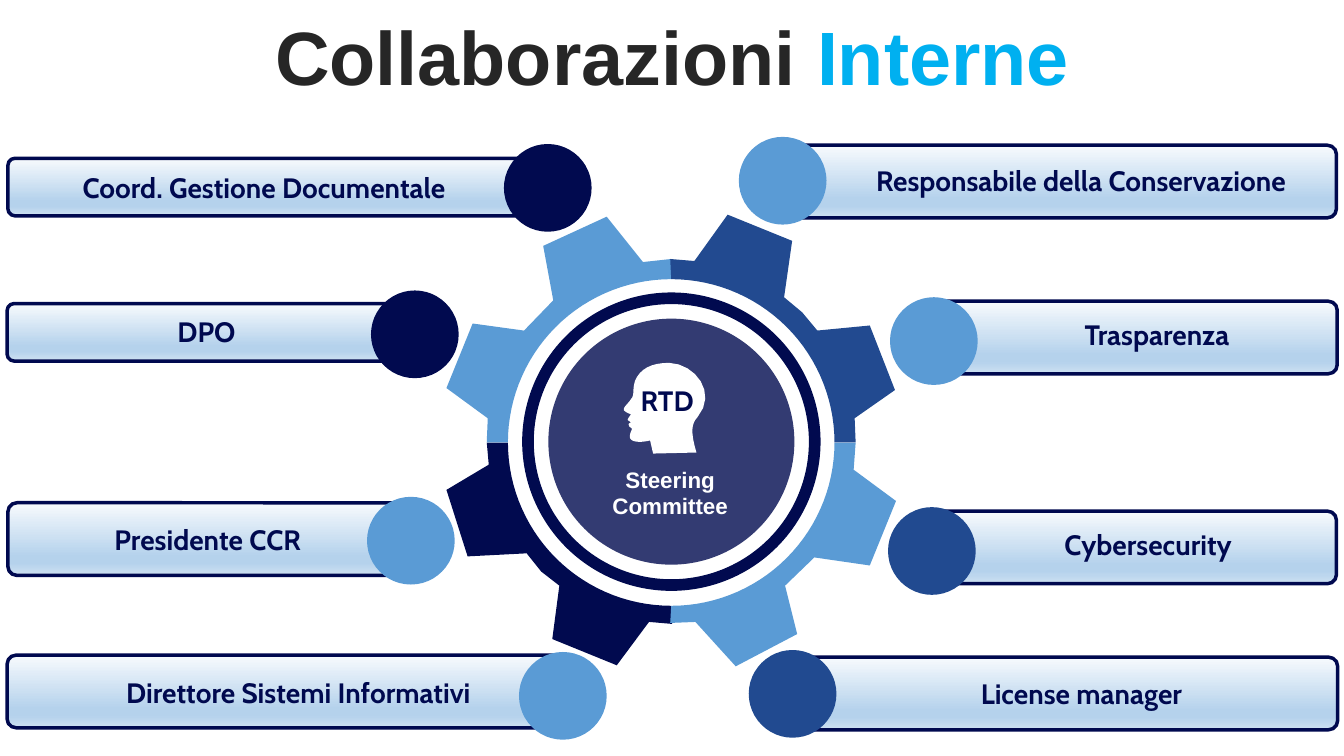
from dataclasses import dataclass
from math import cos, radians, sin

from lxml.etree import SubElement
from pptx import Presentation
from pptx.dml.color import RGBColor
from pptx.enum.shapes import MSO_SHAPE
from pptx.enum.text import MSO_ANCHOR, MSO_AUTO_SIZE, PP_ALIGN
from pptx.oxml.ns import qn
from pptx.util import Cm, Pt


@dataclass(frozen=True)
class Theme:
    ink: str = "00094F"
    navy: str = "010A4F"
    blue: str = "224A90"
    royal: str = "214A90"
    sky: str = "5A9BD5"
    white: str = "FFFFFF"
    title: str = "262626"
    accent: str = "00B0F0"
    bar_stops: tuple = ((0, "F7FAFD"), (74, "B5D2EC"), (83, "B5D2EC"), (100, "CEE1F2"))
    title_size: int = 54
    label_size: int = 20
    hub_size: int = 16
    label_font: str = "Cabin"
    plain_font: str = "Arial"


@dataclass(frozen=True)
class Role:
    """One collaborator: bar (left, top, width, height), ball and label places in cm."""
    name: str
    bar: tuple
    ball: tuple
    ball_color: str
    label: tuple


THEME = Theme()
BALL_SIZE = 2.21
LABEL_HEIGHT = 1.12

ROLES = (
    Role("Coord. Gestione Documentale", (0.2, 3.99, 14.15, 1.45),
         (12.7, 3.63), THEME.navy, (1.17, 4.17, 10.97)),
    Role("DPO", (0.18, 7.65, 10.72, 1.45), (9.35, 7.32), THEME.navy, (0, 7.8, 10.41)),
    Role("Presidente CCR", (0.2, 12.67, 10.72, 1.83),
         (9.25, 12.52), THEME.sky, (0.13, 13.03, 10.21)),
    Role("Direttore Sistemi Informativi", (0.18, 16.51, 14.25, 1.83),
         (13.08, 16.43), THEME.sky, (1.88, 16.89, 11.28)),
    Role("Responsabile della Conservazione", (19.46, 3.66, 14.22, 1.83),
         (18.62, 3.45), THEME.sky, (20.35, 3.99, 13.79)),
    Role("Trasparenza", (23.34, 7.59, 10.36, 1.83),
         (22.43, 7.49), THEME.sky, (26.24, 7.87, 5.84)),
    Role("Cybersecurity", (23.14, 12.88, 10.54, 1.83),
         (22.38, 12.78), THEME.royal, (24.64, 13.18, 8.59)),
    Role("License manager", (19.46, 16.56, 14.25, 1.83),
         (18.87, 16.38), THEME.royal, (22.96, 16.92, 8.59)),
)

# Outlines are measured in hundredths of an inch.
OUTLINE_UNIT = 0.0254
GEAR_CENTER = (666, 439)
GEAR_INNER_RADIUS = 162

# Colour, start angle of the quarter, and its toothed edge, clockwise.
GEAR_QUARTERS = (
    (THEME.navy, 90, (
        (667, 619), (644, 617), (612, 660), (548, 634), (555, 581), (537, 567),
        (521, 547), (522, 549), (464, 552), (443, 486), (485, 461), (483, 439))),
    (THEME.sky, 0, (
        (849, 439), (847, 466), (889, 497), (863, 561), (808, 553), (779, 581),
        (791, 629), (730, 661), (690, 617), (665, 618))),
    (THEME.sky, 180, (
        (483, 439), (484, 415), (443, 385), (469, 321), (520, 328), (549, 298),
        (539, 244), (602, 215), (638, 260), (666, 257))),
    (THEME.blue, 270, (
        (665, 257), (689, 259), (722, 213), (786, 239), (778, 295), (796, 310),
        (811, 328), (863, 323), (888, 387), (848, 415), (849, 439))),
)

# Pairs are straight steps, sextuples are cubic curves.
HEAD_PATH = (
    (664, 360), (646, 360, 635, 366, 630, 378), (627, 388, 630, 392, 626, 396),
    (623, 401, 618, 404, 619, 407), (621, 409, 623, 410, 626, 411),
    (625, 413, 622, 416, 623, 417), (626, 419), (625, 420, 623, 420, 624, 422),
    (624, 424, 627, 424, 627, 426), (625, 430, 624, 434, 626, 436),
    (629, 439, 637, 439, 645, 437), (648, 450), (691, 449),
    (685, 429, 686, 420, 692, 414), (712, 390, 690, 361, 664, 360),
)


def color(value):
    return RGBColor.from_string(value)


def paint(shape, fill):
    shape.shadow.inherit = False
    shape.fill.solid()
    shape.fill.fore_color.rgb = color(fill)
    shape.line.fill.background()


def add_round(page, kind, left, top, size, fill):
    shape = page.shapes.add_shape(kind, Cm(left), Cm(top), Cm(size), Cm(size))
    paint(shape, fill)
    return shape


def add_bar(page, place):
    bar = page.shapes.add_shape(MSO_SHAPE.ROUNDED_RECTANGLE, *map(Cm, place))
    bar.adjustments[0] = 0.124
    bar.shadow.inherit = False
    bar.line.color.rgb = color(THEME.ink)
    bar.line.width = Pt(2.5)
    bar.fill.gradient()
    bar.fill.gradient_angle = 270
    stops = next(bar._element.iter(qn("a:gsLst")))
    for stop in list(stops):
        stops.remove(stop)
    for position, value in THEME.bar_stops:
        stop = SubElement(stops, qn("a:gs"), pos=str(position * 1000))
        SubElement(stop, qn("a:srgbClr"), val=value)


def style_span(span, size, font, value):
    span.font.size = Pt(size)
    span.font.name = font
    span.font.bold = True
    span.font.color.rgb = color(value)


def add_text(page, place, text, size, font, value):
    box = page.shapes.add_textbox(*map(Cm, place))
    frame = box.text_frame
    frame.text = text
    frame.word_wrap = True
    frame.auto_size = MSO_AUTO_SIZE.SHAPE_TO_FIT_TEXT
    para = frame.paragraphs[0]
    para.alignment = PP_ALIGN.CENTER
    style_span(para.runs[0], size, font, value)
    return box


def add_label(page, place, text):
    add_text(page, (*place, LABEL_HEIGHT), text,
             THEME.label_size, THEME.label_font, THEME.ink)


def add_title(page):
    box = add_text(page, (0.86, 0.53, 32.16, 2.01), "Collaborazioni ",
                   THEME.title_size, THEME.plain_font, THEME.title)
    frame = box.text_frame
    frame.auto_size = MSO_AUTO_SIZE.NONE
    frame.vertical_anchor = MSO_ANCHOR.MIDDLE
    para = frame.paragraphs[0]
    para.line_spacing = 0.9
    span = para.add_run()
    span.text = "Interne"
    style_span(span, THEME.title_size, THEME.plain_font, THEME.accent)


def add_outline(page, points, fill):
    scaled = [(Cm(x * OUTLINE_UNIT), Cm(y * OUTLINE_UNIT)) for x, y in points]
    builder = page.shapes.build_freeform(*scaled[0])
    builder.add_line_segments(scaled[1:], close=True)
    paint(builder.convert_to_shape(), fill)


def add_gear(page):
    center_x, center_y = GEAR_CENTER
    for fill, start, edge in GEAR_QUARTERS:
        inner_arc = [(center_x + GEAR_INNER_RADIUS * cos(radians(angle)),
                      center_y + GEAR_INNER_RADIUS * sin(radians(angle)))
                     for angle in range(start + 90, start - 1, -3)]
        add_outline(page, [*edge, *inner_arc], fill)


def flatten(path, steps=8):
    """Turn straight steps and cubic curves into a list of points."""
    points = [path[0]]
    for part in path[1:]:
        if len(part) == 2:
            points.append(part)
            continue
        controls = (points[-1], part[:2], part[2:4], part[4:])
        for step in range(1, steps + 1):
            t = step / steps
            weights = ((1 - t) ** 3, 3 * t * (1 - t) ** 2, 3 * t * t * (1 - t), t ** 3)
            points.append(tuple(sum(weight * point[axis] for weight, point
                                    in zip(weights, controls)) for axis in (0, 1)))
    return points


def add_hub(page):
    disc = add_round(page, MSO_SHAPE.OVAL, 13.82, 8.03, 6.2, THEME.navy)
    disc_color = next(disc._element.spPr.iter(qn("a:srgbClr")))
    SubElement(disc_color, qn("a:alpha"), val="80000")
    add_text(page, (14.91, 11.61, 3.96, 1.63), "Steering Committee",
             THEME.hub_size, THEME.plain_font, THEME.white)
    ring = add_round(page, MSO_SHAPE.DONUT, 13.16, 7.37, 7.52, THEME.navy)
    ring.adjustments[0] = 0.039
    add_outline(page, flatten(HEAD_PATH), THEME.white)
    add_label(page, (15.09, 9.55, 3.45), "RTD")


def add_role(page, role):
    add_bar(page, role.bar)
    add_round(page, MSO_SHAPE.OVAL, *role.ball, BALL_SIZE, role.ball_color)
    add_label(page, role.label, role.name)


def main():
    deck = Presentation()
    deck.slide_width, deck.slide_height = Cm(33.87), Cm(19.05)
    page = deck.slides.add_slide(deck.slide_layouts[6])
    add_title(page)
    for role in ROLES:
        add_role(page, role)
    add_gear(page)
    add_hub(page)
    deck.save("out.pptx")


if __name__ == "__main__":
    main()
